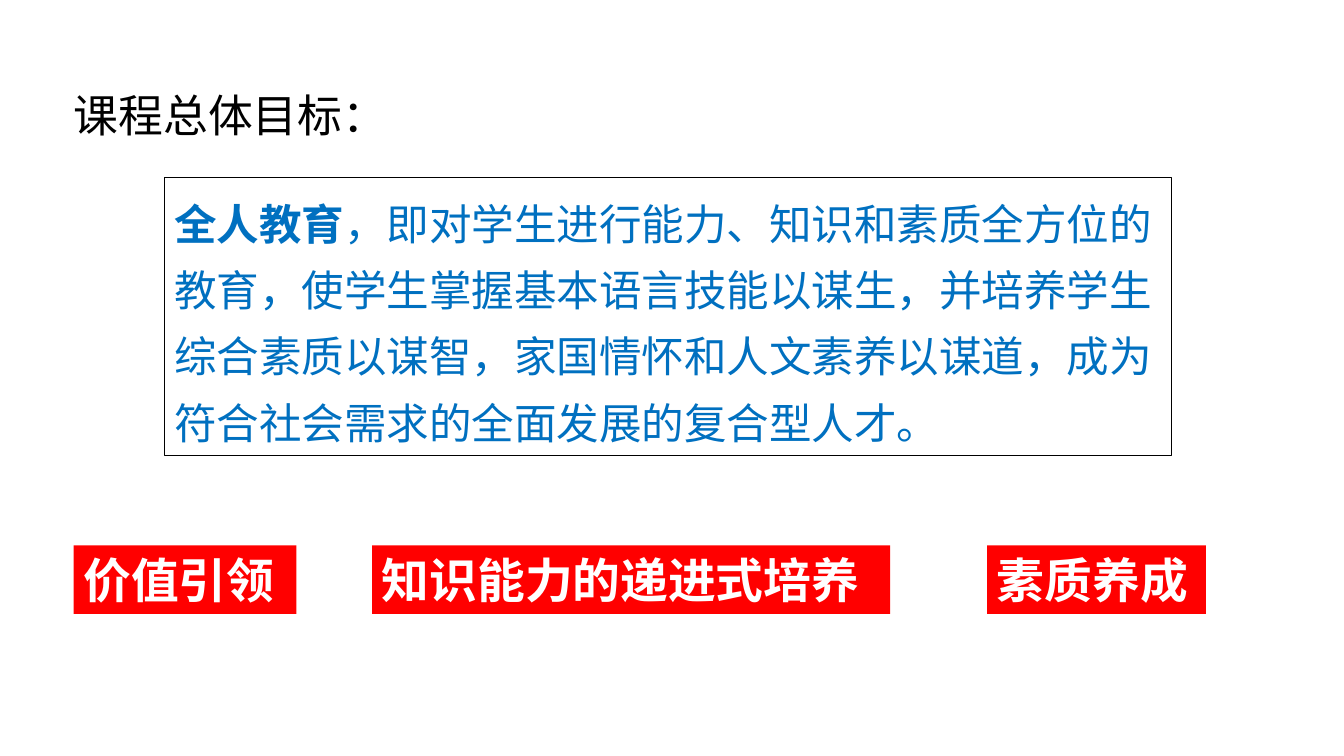
from pptx import Presentation
from pptx.dml.color import RGBColor
from pptx.enum.shapes import MSO_SHAPE
from pptx.enum.text import MSO_ANCHOR, MSO_AUTO_SIZE, PP_ALIGN
from pptx.util import Inches, Pt

RECTANGLE = MSO_SHAPE.RECTANGLE
TOP, MIDDLE = MSO_ANCHOR.TOP, MSO_ANCHOR.MIDDLE
NO_AUTOFIT = MSO_AUTO_SIZE.NONE
LEFT = PP_ALIGN.LEFT

BLACK = RGBColor(0x00, 0x00, 0x00)
WHITE = RGBColor(0xFF, 0xFF, 0xFF)
RED = RGBColor(0xFF, 0x00, 0x00)
BLUE = RGBColor(0x00, 0x70, 0xC0)

TITLE_FONT = {"name": "Noto Sans CJK SC", "size": Pt(32), "bold": False}
GOAL_FONT = {"name": "Calibri", "size": Pt(30.4)}
PILLAR_FONT = {"name": "Arial", "size": Pt(34.1), "bold": True}

GOAL_LEAD = "全人教育"
GOAL_TEXT = (
    "，即对学生进行能力、知识和素质全方位的教育，使学生掌握基本语言技能以谋生，"
    "并培养学生综合素质以谋智，家国情怀和人文素养以谋道，成为符合社会需求的全面发展的复合型人才。"
)
PILLAR_TOP, PILLAR_HEIGHT = 5.41, 0.68
PILLARS = [
    ("价值引领", 0.73, 2.21),
    ("知识能力的递进式培养", 3.69, 5.14),
    ("素质养成", 9.79, 2.17),
]


def set_attributes(target, values):
    for name, value in values.items():
        setattr(target, name, value)


def add_run(paragraph, text, color, font_values):
    run = paragraph.add_run()
    run.text = text
    set_attributes(run.font, font_values)
    run.font.color.rgb = color


def prepare_text(shape, anchor):
    frame = shape.text_frame
    set_attributes(frame, {"word_wrap": True, "auto_size": NO_AUTOFIT, "vertical_anchor": anchor})
    paragraph = frame.paragraphs[0]
    paragraph.alignment = LEFT
    return paragraph


def add_title(slide, text):
    title = slide.shapes.title
    set_attributes(title, {
        "left": Inches(0.73), "top": Inches(0.87),
        "width": Inches(11.87), "height": Inches(0.54),
    })
    paragraph = prepare_text(title, MIDDLE)
    margins = ("margin_left", "margin_top", "margin_right", "margin_bottom")
    set_attributes(title.text_frame, dict.fromkeys(margins, 0))
    add_run(paragraph, text, BLACK, TITLE_FONT)


def add_box(slide, left, top, width, height, fill, anchor):
    box = slide.shapes.add_shape(
        RECTANGLE, Inches(left), Inches(top), Inches(width), Inches(height))
    box.shadow.inherit = False
    box.fill.solid()
    box.fill.fore_color.rgb = fill
    box.line.fill.background()
    return box, prepare_text(box, anchor)


def add_goal(slide):
    box, paragraph = add_box(slide, 1.63, 1.76, 9.99, 2.76, WHITE, TOP)
    box.line.color.rgb = BLACK
    box.line.width = Pt(1)
    paragraph.line_spacing = 1.3
    add_run(paragraph, GOAL_LEAD, BLUE, {**GOAL_FONT, "bold": True})
    add_run(paragraph, GOAL_TEXT, BLUE, {**GOAL_FONT, "bold": False})


def add_pillar(slide, text, left, width):
    _, paragraph = add_box(slide, left, PILLAR_TOP, width, PILLAR_HEIGHT, RED, MIDDLE)
    add_run(paragraph, text, WHITE, PILLAR_FONT)


def main():
    presentation = Presentation()
    presentation.slide_width = Inches(13.33)
    presentation.slide_height = Inches(7.5)
    slide = presentation.slides.add_slide(presentation.slide_layouts[5])
    add_title(slide, "课程总体目标：")
    add_goal(slide)
    for pillar in PILLARS:
        add_pillar(slide, *pillar)
    presentation.save("out.pptx")


if __name__ == "__main__":
    main()
